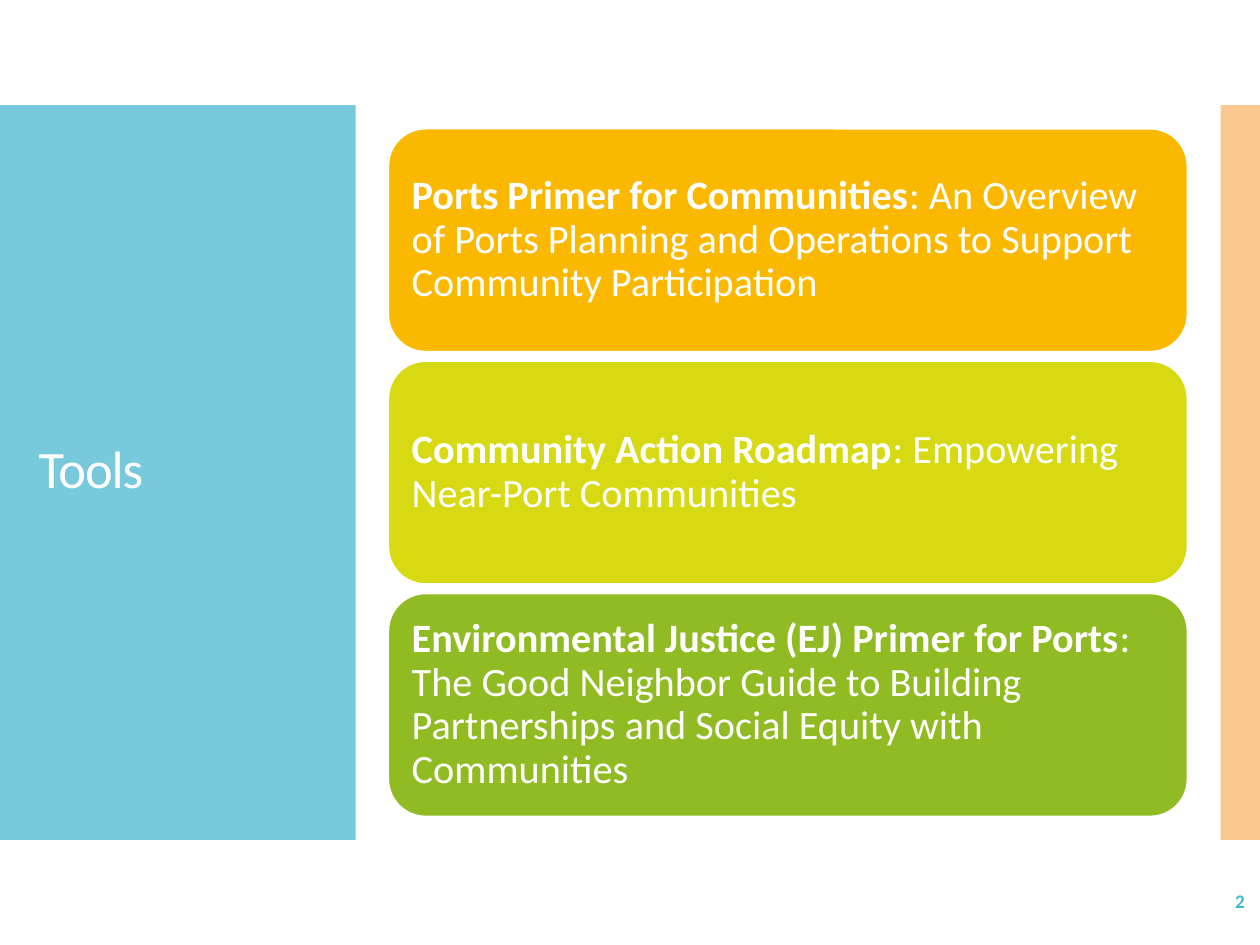
from lxml.etree import SubElement
from pptx import Presentation
from pptx.dml.color import RGBColor
from pptx.enum.shapes import MSO_SHAPE as SHAPE
from pptx.enum.text import MSO_ANCHOR as ANCHOR, PP_ALIGN as ALIGN
from pptx.oxml.ns import qn
from pptx.util import Pt

# Content: fill, bold lead, plain rest (no-break spaces after some words)
CARDS = [
    ("FAB900", "Ports Primer for Communities",
     ": An Overview of Ports Planning and Operations to Support Community Participation"),
    ("D7D913", "Community Action Roadmap", ": Empowering Near-Port Communities"),
    ("90BB23", "Environmental Justice (EJ) Primer for Ports",
     ": The Good Neighbor Guide to Building Partnerships and Social Equity with Communities"),
]
TITLE = "Tools"
PAGE = "2"

# Layout in points
BAND_TOP, BAND_H = 60, 420
CARD_X, CARD_Y, CARD_W, CARD_H, CARD_STEP = 222, 73.6, 456.5, 127.3, 132.8


def rgb(value):
    return RGBColor.from_string(value)


def add_box(kind, x, y, w, h, fill, line=None):
    sp = s.shapes.add_shape(kind, Pt(x), Pt(y), Pt(w), Pt(h))
    sp.shadow.inherit = False
    sp.fill.solid()
    sp.fill.fore_color.rgb = rgb(fill)
    if line:
        sp.line.color.rgb = rgb(line)
        sp.line.width = Pt(0.85)
    else:
        sp.line.fill.background()
    return sp


def write(sp, runs, size, color="FFFFFF", **para):
    """Fill a shape with one paragraph of (text, bold) runs."""
    tf = sp.text_frame
    tf.word_wrap = True
    tf.vertical_anchor = ANCHOR.MIDDLE
    p = tf.paragraphs[0]
    for name, value in para.items():
        setattr(p, name, value)
    for text, bold in runs:
        r = p.add_run()
        r.text = text
        for name, value in {"name": "Calibri", "size": Pt(size), "bold": bold}.items():
            setattr(r.font, name, value)
        r.font.color.rgb = rgb(color)
    return p


prs = Presentation()
prs.slide_width, prs.slide_height = Pt(720), Pt(540)
s = prs.slides.add_slide(prs.slide_layouts[6])

# Side bands, the right one half transparent
add_box(SHAPE.RECTANGLE, 0, BAND_TOP, 203.3, BAND_H, "79C9DD")
accent = add_box(SHAPE.RECTANGLE, 697.5, BAND_TOP, 22.5, BAND_H, "F79421")
color = accent.fill._xPr.find(".//" + qn("a:srgbClr"))
SubElement(color, qn("a:alpha"), val="50000")

# Title
title = s.shapes.add_textbox(Pt(15), Pt(88.6), Pt(174), Pt(362))
p = write(title, [(TITLE, False)], 30, line_spacing=0.9)
p.runs[0].font._element.set("spc", "-60")

# Page number
number = s.shapes.add_textbox(Pt(627.8), Pt(500.4), Pt(90.7), Pt(28.8))
write(number, [(PAGE, True)], 11, "40BAD2", alignment=ALIGN.RIGHT, space_after=Pt(6))

# Cards
for i, (fill, lead, rest) in enumerate(CARDS):
    card = add_box(SHAPE.ROUNDED_RECTANGLE, CARD_X, CARD_Y + i * CARD_STEP,
                   CARD_W, CARD_H, fill, "FFFFFF")
    for side in ("left", "right", "top", "bottom"):
        setattr(card.text_frame, "margin_" + side, Pt(7.2))
    write(card, [(lead, True), (rest, False)], 23,
          alignment=ALIGN.LEFT, line_spacing=0.9, space_after=Pt(8))

prs.save("out.pptx")
